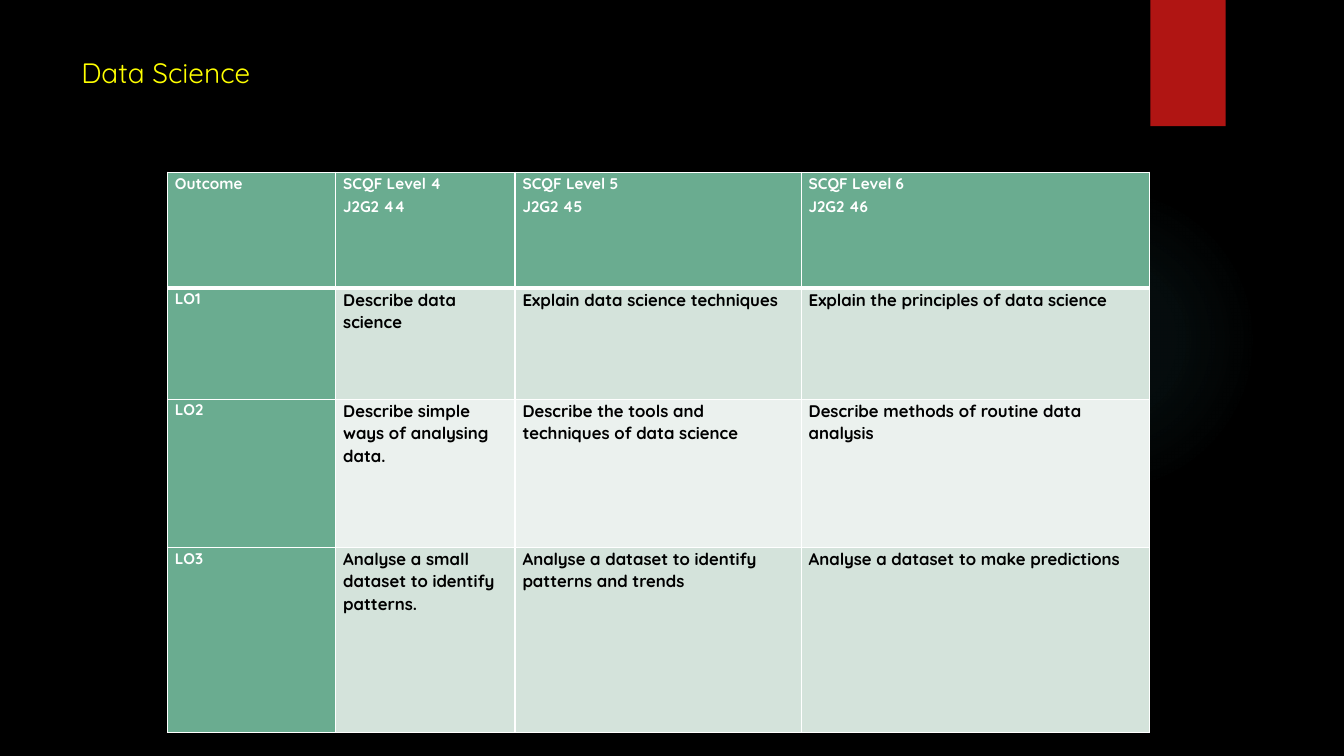
"""Build the Data Science learning outcomes slide."""
from dataclasses import dataclass

from lxml import etree
from pptx import Presentation
from pptx import util as u
from pptx.dml.color import RGBColor
from pptx.enum import shapes, text
from pptx.oxml import parse_xml
from pptx.oxml.ns import nsdecls, qn

TITLE = "Data Science"
ROWS = [
    ["Outcome", "SCQF Level 4\nJ2G2 44", "SCQF Level 5\nJ2G2 45", "SCQF Level 6\nJ2G2 46"],
    ["LO1", "Describe data science", "Explain data science techniques",
     "Explain the principles of data science"],
    ["LO2", "Describe simple ways of analysing data.",
     "Describe the tools and techniques of data science",
     "Describe methods of routine data analysis"],
    ["LO3", "Analyse a small dataset to identify patterns.",
     "Analyse a dataset to identify patterns and trends",
     "Analyse a dataset to make predictions"],
]
COL_WIDTHS = [4.24, 4.52, 7.21, 8.77]
ROW_HEIGHTS = [2.92, 2.8, 3.73, 4.67]
GLOW_STOPS = [(0, 7), (36, 6), (69, 0)]


@dataclass(frozen=True)
class Theme:
    font: str = "Quicksand"
    back: str = "000000"
    title: str = "FFFF00"
    glow: str = "50B9C1"
    tab: str = "B01513"
    head: str = "6AAC90"
    bands: tuple = ("EBF1EE", "D4E3DB")
    light: str = "FFFFFF"
    dark: str = "000000"
    title_size: int = 20
    head_size: int = 11
    body_size: int = 12


T = Theme()


def write(tf, content, size, color, bold=False, spacing=None, after=0):
    tf.word_wrap = True
    for i, line in enumerate(content.split("\n")):
        p = tf.paragraphs[0] if i == 0 else tf.add_paragraph()
        p.line_spacing = spacing
        p.space_after = u.Pt(after)
        r = p.add_run()
        r.text = line
        r.font.name, r.font.size, r.font.bold = T.font, u.Pt(size), bold
        r.font.color.rgb = RGBColor.from_string(color)


def add_plain(s, kind, left, top, width, height, color):
    sp = s.shapes.add_shape(kind, *map(u.Cm, (left, top, width, height)))
    sp.shadow.inherit = False
    sp.fill.solid()
    sp.fill.fore_color.rgb = RGBColor.from_string(color)
    sp.line.fill.background()
    return sp


def add_glow(sp):
    stops = "".join(
        f'<a:gs pos="{pos * 1000}"><a:srgbClr val="{T.glow}">'
        f'<a:alpha val="{alpha * 1000}"/></a:srgbClr></a:gs>' for pos, alpha in GLOW_STOPS)
    grad = parse_xml(
        f'<a:gradFill {nsdecls("a")}><a:gsLst>{stops}</a:gsLst><a:path path="circle">'
        '<a:fillToRect l="50000" t="50000" r="50000" b="50000"/></a:path></a:gradFill>')
    solid = sp.element.spPr.find(qn("a:solidFill"))
    solid.getparent().replace(solid, grad)


def add_borders(cell, widths):
    tc_pr = cell._tc.get_or_add_tcPr()
    for i, (side, width) in enumerate(widths.items()):
        ln = etree.Element(qn(f"a:ln{side}"), w=str(u.Pt(width)))
        fill = etree.SubElement(ln, qn("a:solidFill"))
        etree.SubElement(fill, qn("a:srgbClr"), val=T.light)
        tc_pr.insert(i, ln)


def add_outcomes(s, left, top):
    size = sum(COL_WIDTHS), sum(ROW_HEIGHTS)
    tbl = s.shapes.add_table(len(ROWS), len(COL_WIDTHS),
                             *map(u.Cm, (left, top, *size))).table
    for col, width in zip(tbl.columns, COL_WIDTHS):
        col.width = u.Cm(width)
    for row, height in zip(tbl.rows, ROW_HEIGHTS):
        row.height = u.Cm(height)
    for i, row in enumerate(ROWS):
        for j, content in enumerate(row):
            cell = tbl.cell(i, j)
            head = i == 0 or j == 0
            cell.margin_left = cell.margin_right = u.Cm(0.19)
            cell.margin_top = cell.margin_bottom = 0
            cell.fill.solid()
            cell.fill.fore_color.rgb = RGBColor.from_string(T.head if head else T.bands[i % 2])
            write(cell.text_frame, content, T.head_size if head else T.body_size,
                  T.light if head else T.dark, bold=True, spacing=1.07, after=1.9)
            add_borders(cell, {"L": 1, "R": 1, "T": 3 if i == 1 else 1, "B": 3 if i == 0 else 1})


def main():
    prs = Presentation()
    prs.slide_width, prs.slide_height = u.Cm(33.87), u.Cm(19.05)
    s = prs.slides.add_slide(prs.slide_layouts[6])
    s.background.fill.solid()
    s.background.fill.fore_color.rgb = RGBColor.from_string(T.back)
    add_glow(add_plain(s, shapes.MSO_SHAPE.OVAL, 23.9, 4.65, 7.82, 7.82, T.glow))
    add_plain(s, shapes.MSO_SHAPE.RECTANGLE, 28.99, 0, 1.9, 3.18, T.tab)
    title = s.shapes.add_textbox(*map(u.Cm, (1.8, 1.27, 26.14, 1.7))).text_frame
    title.vertical_anchor = text.MSO_ANCHOR.TOP
    write(title, TITLE, T.title_size, T.title)
    add_outcomes(s, 4.22, 4.34)
    prs.save("out.pptx")


if __name__ == "__main__":
    main()
